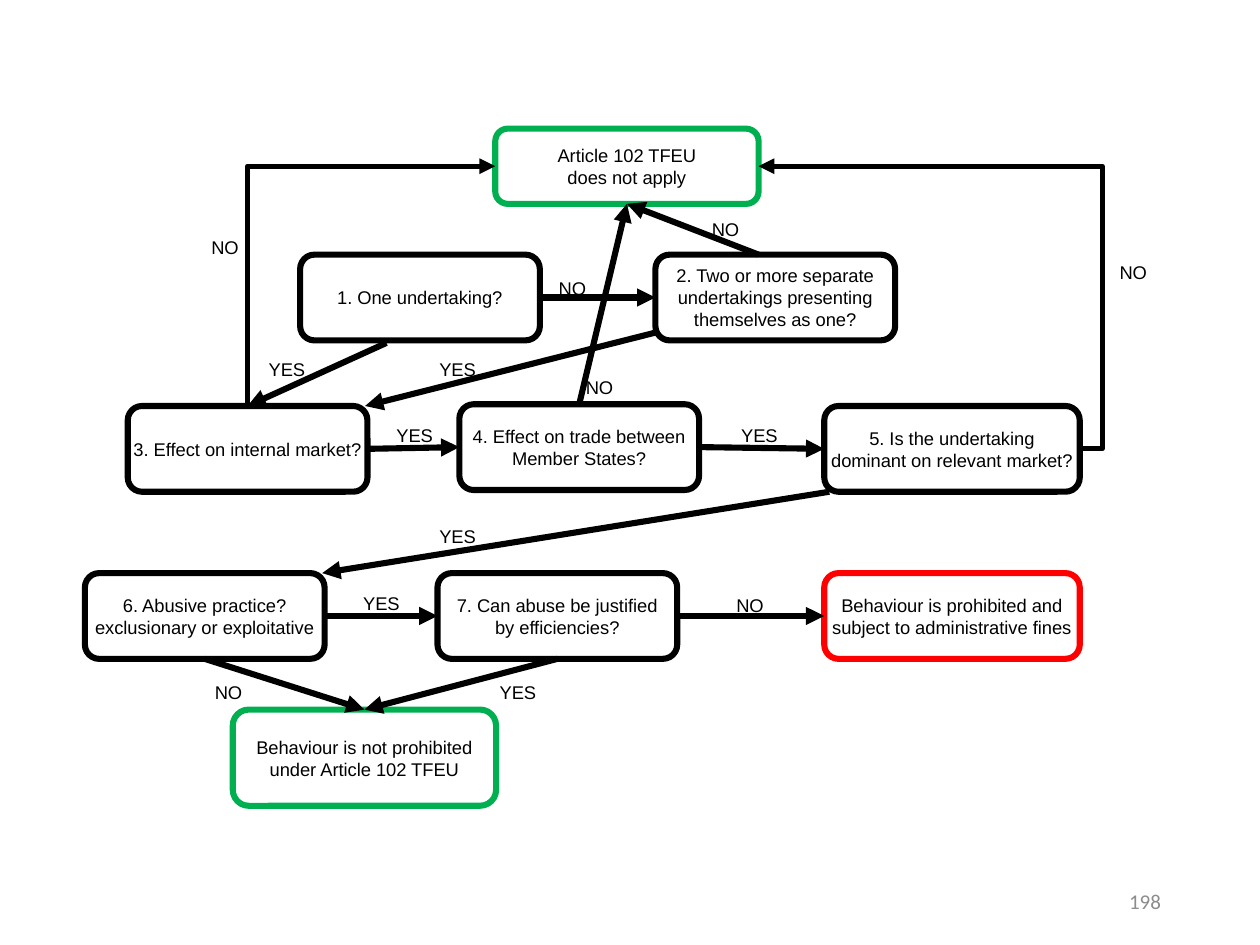
import pptx
import pptx.util
import pptx.dml.color
import pptx.enum.shapes
import pptx.enum.text
import pptx.oxml.ns
import pptx.oxml.xmlchemy

Pt = pptx.util.Pt
Align = pptx.enum.text.PP_ALIGN
Anchor = pptx.enum.text.MSO_ANCHOR
Kind = pptx.enum.shapes.MSO_CONNECTOR
make = pptx.oxml.xmlchemy.OxmlElement

COLORS = {"black": "000000", "green": "00B050", "red": "FF0000", "gray": "8C8C8C"}

# Boxes: left, top, width, height, line color, text lines
BOXES = {
    "one": (171.5, 145.5, 137, 49, "black", ["1. One undertaking?"]),
    "two": (374.5, 145.5, 137, 49, "black", [
        "2. Two or more separate", "undertakings presenting", "themselves as one?"]),
    "market": (73, 232, 137, 49, "black", ["3. Effect on internal market?"]),
    "trade": (262.5, 231, 137, 49, "black", [
        "4. Effect on trade between", "Member States?"]),
    "power": (471, 232, 146, 49, "black", [
        "5. Is the undertaking", "dominant on relevant market?"]),
    "abuse": (48.5, 327.5, 137, 49, "black", [
        "6. Abusive practice?", "exclusionary or exploitative"]),
    "excuse": (250, 327.5, 137, 49, "black", [
        "7. Can abuse be justified", "by efficiencies?"]),
    "exempt": (283, 73.5, 150.5, 43, "green", ["Article 102 TFEU", "does not apply"]),
    "legal": (133, 405.5, 150.5, 55, "green", [
        "Behaviour is not prohibited", "under Article 102 TFEU"]),
    "banned": (471, 327.5, 146, 49, "red", [
        "Behaviour is prohibited and", "subject to administrative fines"]),
}

# Arrows join points given as fractions of box width and height
LEFT, RIGHT, TOP, BOTTOM = (0, 0.5), (1, 0.5), (0.5, 0), (0.5, 1)
ARROWS = [
    ("one", RIGHT, "two", LEFT),
    ("market", RIGHT, "trade", LEFT),
    ("trade", RIGHT, "power", LEFT),
    ("abuse", RIGHT, "excuse", LEFT),
    ("excuse", RIGHT, "banned", LEFT),
    ("two", (0, 0.91), "market", (0.99, 0)),
    ("power", (0.02, 1), "abuse", (0.99, 0)),
    ("two", (0.43, 0), "exempt", BOTTOM),
    ("abuse", BOTTOM, "legal", TOP),
    ("excuse", BOTTOM, "legal", TOP),
    ("trade", TOP, "exempt", BOTTOM),
    ("one", (0.36, 1.03), "market", TOP),
]
# Elbow arrows also carry the bend as a share of their width
ELBOWS = [
    ("power", RIGHT, "exempt", RIGHT, -0.07),
    ("market", TOP, "exempt", LEFT, 0),
]

# Left and top of each answer label
LABELS = {
    "NO": [(322, 211.5), (627, 145.5), (306.5, 155), (108, 131.5),
           (394, 121), (110, 386), (408, 336)],
    "YES": [(146, 201), (243.5, 201), (219, 239), (416, 239),
            (243.5, 296.5), (200, 335), (278, 386)],
}


def paint(name):
    return pptx.dml.color.RGBColor.from_string(COLORS[name])


def write(frame, lines, align, size=10.5, font="Arial", color="black"):
    frame.text = "\n".join(lines)
    for para in frame.paragraphs:
        para.alignment = align
        for run in para.runs:
            run.font.size = Pt(size)
            run.font.name = font
            run.font.color.rgb = paint(color)


def spot(name, part):
    left, top, wide, high = BOXES[name][:4]
    return Pt(left + wide * part[0]), Pt(top + high * part[1])


def arrow(kind, start, end, width):
    link = slide.shapes.add_connector(kind, *start, *end)
    link.line.width = Pt(width)
    link.line.color.rgb = paint("black")
    props = link._element.spPr
    tail = make("a:tailEnd")
    tail.set("type", "triangle")
    props.find(pptx.oxml.ns.qn("a:ln")).append(tail)
    props.append(make("a:effectLst"))
    return props


def label(left, top, wide, high):
    frame = slide.shapes.add_textbox(Pt(left), Pt(top), Pt(wide), Pt(high)).text_frame
    frame.word_wrap = True
    frame.margin_left = 0
    return frame


deck = pptx.Presentation()
deck.slide_width, deck.slide_height = Pt(720), Pt(540)
slide = deck.slides.add_slide(deck.slide_layouts[6])

# Boxes
for left, top, wide, high, color, lines in BOXES.values():
    box = slide.shapes.add_shape(
        pptx.enum.shapes.MSO_SHAPE.ROUNDED_RECTANGLE,
        Pt(left), Pt(top), Pt(wide), Pt(high))
    box.shadow.inherit = False
    box.fill.background()
    box.line.color.rgb = paint(color)
    box.line.width = Pt(3.5)
    box.text_frame.word_wrap = False
    box.text_frame.vertical_anchor = Anchor.MIDDLE
    write(box.text_frame, lines, Align.CENTER)

# Arrows
for source, out, target, into in ARROWS:
    arrow(Kind.STRAIGHT, spot(source, out), spot(target, into), 3.5)
for source, out, target, into, bend in ELBOWS:
    props = arrow(Kind.ELBOW, spot(source, out), spot(target, into), 3)
    guide = make("a:gd")
    guide.set("name", "adj1")
    guide.set("fmla", f"val {round(bend * 100000)}")
    props.find(".//" + pptx.oxml.ns.qn("a:avLst")).append(guide)

# Answers
for word, spots in LABELS.items():
    for left, top in spots:
        write(label(left, top, 35.5, 20), [word], Align.RIGHT)

# Page number
page = label(508.5, 500.5, 162, 28.5)
page.vertical_anchor = Anchor.MIDDLE
write(page, ["198"], Align.RIGHT, 12, "Calibri", "gray")

deck.save("out.pptx")
